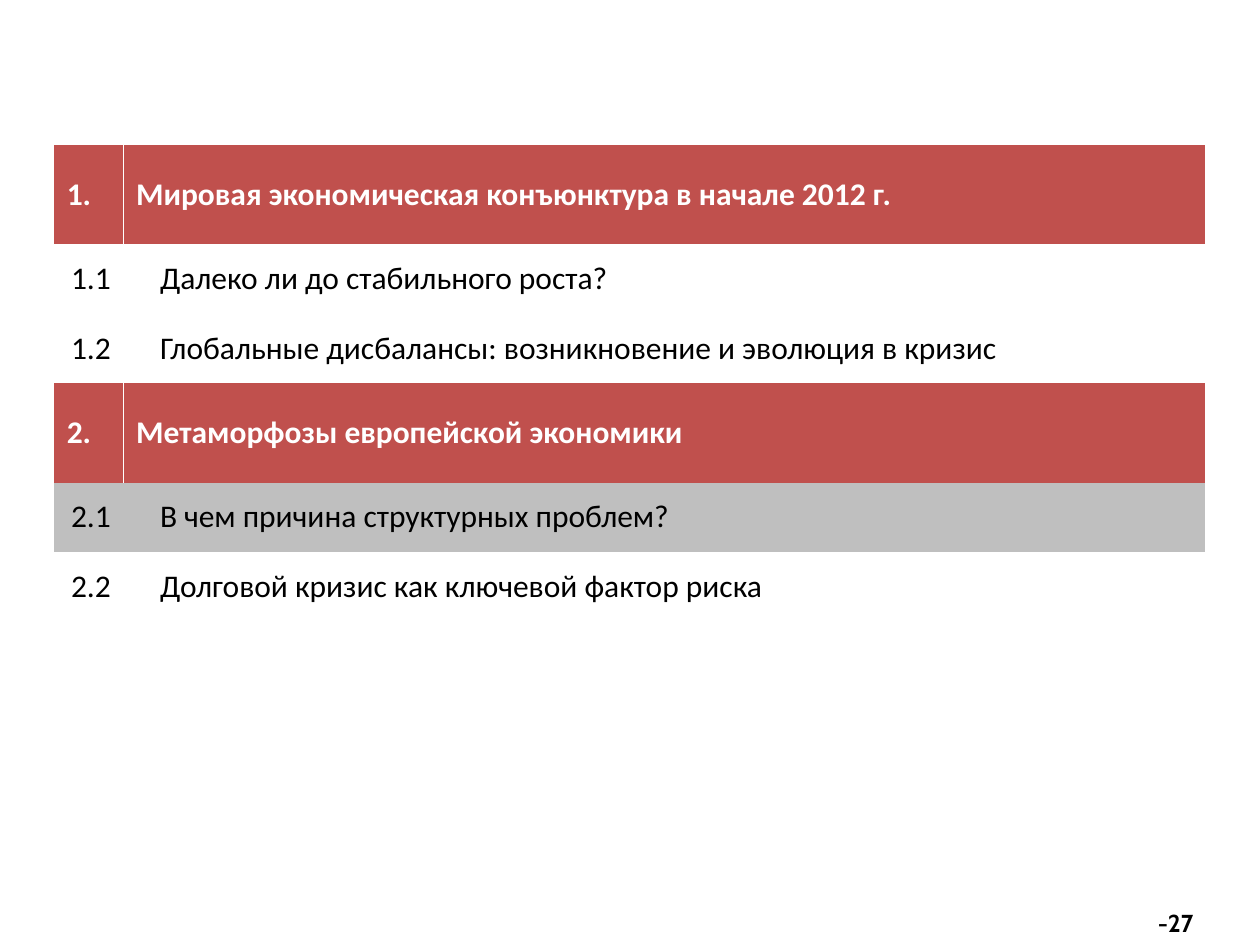
import pptx
import pptx.util
import pptx.dml.color
import pptx.enum.text
import pptx.oxml
import pptx.oxml.ns

Inches = pptx.util.Inches
Pt = pptx.util.Pt
ALIGN = pptx.enum.text.PP_ALIGN
MIDDLE = pptx.enum.text.MSO_ANCHOR.MIDDLE


def color(value):
    return pptx.dml.color.RGBColor.from_string(value)


def format_text(para, font_name, size, value, bold):
    for span in para.runs:
        span.font.name = font_name
        span.font.size = Pt(size)
        span.font.bold = bold
        span.font.color.rgb = color(value)


deck = pptx.Presentation()
deck.slide_width = Inches(10)
deck.slide_height = Inches(7.5)
page = deck.slides.add_slide(deck.slide_layouts[6])

agenda = [
    ("1.", "Мировая экономическая конъюнктура в начале 2012 г.", "C0504D"),
    ("1.1", "Далеко ли до стабильного роста?", None),
    ("1.2", "Глобальные дисбалансы: возникновение и эволюция в кризис", None),
    ("2.", "Метаморфозы европейской экономики", "C0504D"),
    ("2.1", "В чем причина структурных проблем?", "BFBFBF"),
    ("2.2", "Долговой кризис как ключевой фактор риска", None),
]
frame = page.shapes.add_table(len(agenda), 2, Inches(0.43), Inches(1.15), Inches(9.13), Inches(3.78))
table = frame.table
table.first_row = False
table.horz_banding = False
style = table._tbl.tblPr.find(pptx.oxml.ns.qn("a:tableStyleId"))
style.text = "{2D5ABB26-0587-4C30-8999-92F81FD0307C}"
table.columns[0].width = Inches(0.55)
table.columns[1].width = Inches(8.58)

for row, (number, title, fill) in enumerate(agenda):
    heading = number.endswith(".")
    table.rows[row].height = Inches(0.79 if heading else 0.55)
    for column, text in enumerate((number, title)):
        cell = table.cell(row, column)
        cell.vertical_anchor = MIDDLE
        cell.text_frame.text = text
        para = cell.text_frame.paragraphs[0]
        format_text(para, "Calibri", 18, "FFFFFF" if heading else "000000", heading)
        if heading:
            side = ("lnR", "lnL")[column]
            cell._tc.get_or_add_tcPr().append(pptx.oxml.parse_xml(
                f'<a:{side} {pptx.oxml.ns.nsdecls("a")} w="12700"><a:solidFill>'
                f'<a:srgbClr val="FFFFFF"/></a:solidFill></a:{side}>'))
        elif column == 0:
            para.alignment = ALIGN.RIGHT
        else:
            properties = para._p.get_or_add_pPr()
            properties.set("marL", str(Inches(0.19)))
            properties.set("indent", "0")
        if fill:
            cell.fill.solid()
            cell.fill.fore_color.rgb = color(fill)
        else:
            cell.fill.background()

number_box = page.shapes.add_textbox(Inches(9.02), Inches(7.14), Inches(0.55), Inches(0.37))
number_box.text_frame.word_wrap = True
number_box.text_frame.vertical_anchor = MIDDLE
number_box.text_frame.text = "-27"
para = number_box.text_frame.paragraphs[0]
para.alignment = ALIGN.RIGHT
format_text(para, "Cabin", 14, "000000", True)

deck.save("out.pptx")
